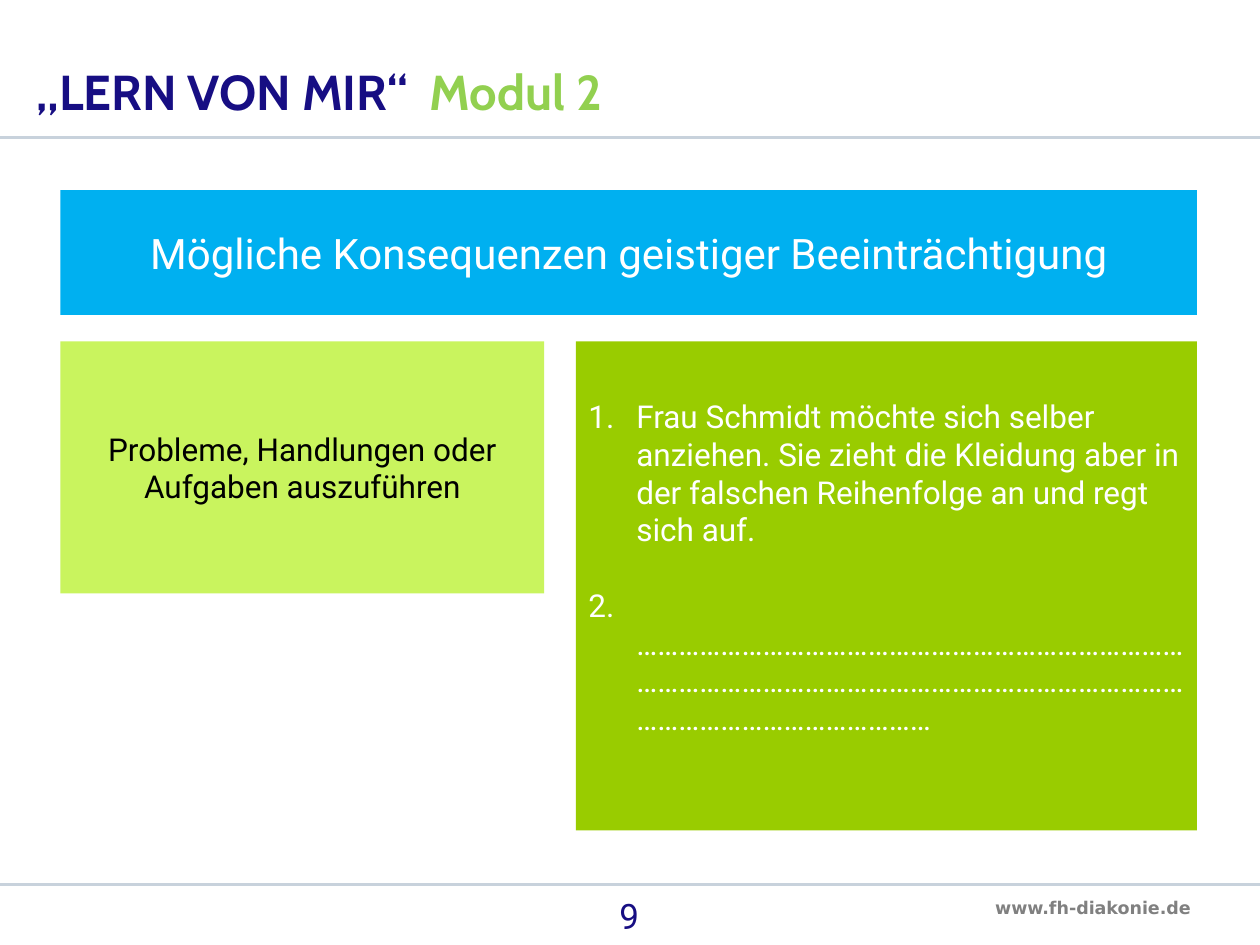
import pptx
import pptx.util
import pptx.dml.color
import pptx.enum.shapes
import pptx.enum.text
from lxml import etree

RGB = pptx.dml.color.RGBColor
NAVY = RGB(0x17, 0x0E, 0x83)
LEAF = RGB(0x92, 0xD0, 0x50)
SKY = RGB(0x00, 0xB0, 0xF0)
LIME = RGB(0xC9, 0xF4, 0x5E)
GREEN = RGB(0x99, 0xCC, 0x00)
RULE = RGB(0xC8, 0xD2, 0xDC)
GREY = RGB(0x80, 0x80, 0x80)
WHITE = RGB(0xFF, 0xFF, 0xFF)
BLACK = RGB(0x00, 0x00, 0x00)

ANCHOR = pptx.enum.text.MSO_ANCHOR
ALIGN = pptx.enum.text.PP_ALIGN
Pt = pptx.util.Pt

# The slide is a grid of 100 columns by 75 rows
CELL = pptx.util.Inches(0.1)
COLS, ROWS = 100, 75
LEFT, RIGHT = 4.8, 95
TOP = 27.1

ITEMS = [
    "Frau Schmidt möchte sich selber anziehen. Sie zieht die Kleidung aber "
    "in der falschen Reihenfolge an und regt sich auf.",
    " " + "…" * 66,
]


def grid(*cells):
    return [int(c * CELL) for c in cells]


def set_all(obj, formats):
    for name, value in formats.items():
        setattr(obj, name, value)


def place(sp, box):
    set_all(sp, dict(zip(("left", "top", "width", "height"), grid(*box))))


def add_run(p, text, size, color, font="Roboto", bold=False):
    r = p.add_run()
    r.text = text
    set_all(r.font, {"size": Pt(size), "name": font, "bold": bold})
    r.font.color.rgb = color


def rule(s, row):
    line = s.shapes.add_connector(
        pptx.enum.shapes.MSO_CONNECTOR.STRAIGHT, *grid(0, row, COLS, row))
    line.line.color.rgb = RULE
    line.line.width = Pt(1.5)
    etree.SubElement(line._element.spPr, pptx.oxml.ns.qn("a:effectLst"))


def label(s, box, text, size, color, align, wrap=True, **font):
    tf = s.shapes.add_textbox(*grid(*box)).text_frame
    tf.word_wrap = wrap
    p = tf.paragraphs[0]
    p.alignment = align
    add_run(p, text, size, color, **font)


def title(s, box):
    sp = s.shapes.title
    place(sp, box)
    set_all(sp.text_frame, {"vertical_anchor": ANCHOR.BOTTOM, "word_wrap": True,
                            "auto_size": pptx.enum.text.MSO_AUTO_SIZE.NONE})
    p = sp.text_frame.paragraphs[0]
    set_all(p, {"alignment": ALIGN.LEFT, "line_spacing": 0.9})
    for text, color in (("„LERN VON MIR“  ", NAVY), ("Modul 2", LEAF)):
        add_run(p, text, 28, color, font="Cabin", bold=True)


def panel(s, box, text, size, fill, color):
    sp = s.shapes.add_shape(pptx.enum.shapes.MSO_SHAPE.RECTANGLE, *grid(*box))
    sp.shadow.inherit = False
    sp.fill.solid()
    sp.fill.fore_color.rgb = fill
    sp.line.fill.background()
    set_all(sp.text_frame, {"vertical_anchor": ANCHOR.MIDDLE, "word_wrap": True})
    p = sp.text_frame.paragraphs[0]
    p.alignment = ALIGN.CENTER
    add_run(p, text, size, color)


def numbered_list(s, box, items):
    sp = s.placeholders[1]
    place(sp, box)
    sp.fill.solid()
    sp.fill.fore_color.rgb = GREEN
    tf = sp.text_frame
    set_all(tf, {"vertical_anchor": ANCHOR.MIDDLE, "word_wrap": True,
                 "auto_size": pptx.enum.text.MSO_AUTO_SIZE.NONE,
                 "margin_bottom": int(3.5 * CELL)})
    for i, text in enumerate(items):
        p = tf.add_paragraph() if i else tf.paragraphs[0]
        pPr = p._p.get_or_add_pPr()
        indent = int(3.8 * CELL)
        pPr.set("marL", str(indent))
        pPr.set("indent", str(-indent))
        bullet = etree.SubElement(pPr, pptx.oxml.ns.qn("a:buAutoNum"))
        bullet.set("type", "arabicPeriod")
        set_all(p, {"alignment": ALIGN.LEFT, "space_before": Pt(21.5 if i else 0)})
        add_run(p, text, 18, WHITE)


def footer(s, row):
    rule(s, row)
    label(s, (38.3, row + 0.3, 23.3, 4.5), "9", 20, NAVY, ALIGN.CENTER)
    label(s, (78, row + 0.5, 17.8, 2.7), "www.fh-diakonie.de", 10, GREY,
          ALIGN.LEFT, wrap=False, font="DejaVu Sans", bold=True)


def main():
    prs = pptx.Presentation()
    prs.slide_width, prs.slide_height = grid(COLS, ROWS)
    s = prs.slides.add_slide(prs.slide_layouts[1])
    title(s, (1.9, 4.3, 66.7, 5.8))
    rule(s, 10.9)
    panel(s, (LEFT, 15.1, RIGHT - LEFT, 9.9),
          "Mögliche Konsequenzen geistiger Beeinträchtigung", 24, SKY, WHITE)
    panel(s, (LEFT, TOP, 38.4, 20),
          "Probleme, Handlungen oder Aufgaben auszuführen", 18, LIME, BLACK)
    numbered_list(s, (45.7, TOP, RIGHT - 45.7, 38.8), ITEMS)
    footer(s, 70.2)
    prs.save("out.pptx")


if __name__ == "__main__":
    main()
